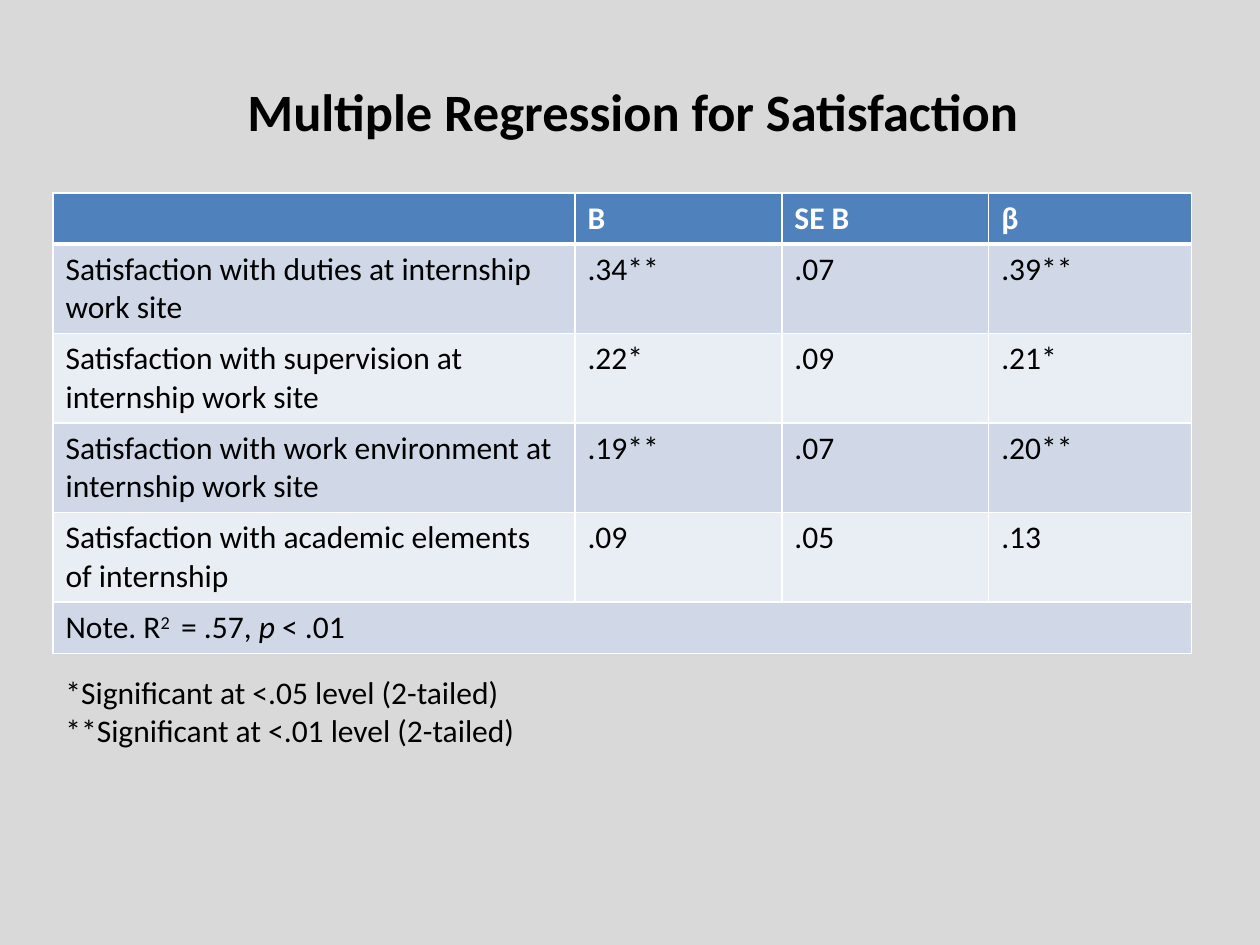
from lxml import etree
from pptx import Presentation
from pptx.dml.color import RGBColor
from pptx.enum.text import PP_ALIGN
from pptx.oxml.ns import qn
from pptx.util import Cm, Pt

CENTER = PP_ALIGN.CENTER
HUES = {"page": "D9D9D9", "head": "4F81BD", "odd": "D0D8E8",
        "even": "E9EDF4", "line": "FFFFFF", "text": "000000"}


def add_run(para, text, size=18, hue="text", bold=False, italic=False):
    run = para.add_run()
    run.text = text
    font = run.font
    font.name, font.size = "Calibri", Pt(size)
    font.bold, font.italic = bold, italic
    font.color.rgb = RGBColor.from_string(HUES[hue])
    return run


def add_edge(cell, side, width):
    """Draw one border of a cell; side is L, R, T or B."""
    props = cell._tc.get_or_add_tcPr()
    line = etree.SubElement(props, qn(f"a:ln{side}"), w=str(Pt(width)))
    fill = etree.SubElement(line, qn("a:solidFill"))
    etree.SubElement(fill, qn("a:srgbClr"), val=HUES["line"])


prs = Presentation()
prs.slide_width, prs.slide_height = Cm(25.4), Cm(19.05)
slide = prs.slides.add_slide(prs.slide_layouts[6])
back = slide.background.fill
back.solid()
back.fore_color.rgb = RGBColor.from_string(HUES["page"])

# Regression table
rows = [
    ("", "B", "SE B", "β"),
    ("Satisfaction with duties at internship work site",
     ".34**", ".07", ".39**"),
    ("Satisfaction with supervision at internship work site",
     ".22*", ".09", ".21*"),
    ("Satisfaction with work environment at internship work site",
     ".19**", ".07", ".20**"),
    ("Satisfaction with academic elements of internship",
     ".09", ".05", ".13"),
    ("", "", "", ""),
]
widths = [10.52, 4.17, 4.17, 4.09]
heights = [1.03] + [1.78] * 4 + [1.03]
table = slide.shapes.add_table(
    len(rows), len(widths), Cm(1.07), Cm(3.89),
    Cm(sum(widths)), Cm(sum(heights))).table
for col, width in zip(table.columns, widths):
    col.width = Cm(width)
for row, height in zip(table.rows, heights):
    row.height = Cm(height)

for r, row in enumerate(rows):
    top = r == 0
    band = "head" if top else "odd" if r % 2 else "even"
    for c, text in enumerate(row):
        cell = table.cell(r, c)
        for side in "LRTB":
            thick = (top and side == "B") or (r == 1 and side == "T")
            add_edge(cell, side, 3 if thick else 1)
        cell.fill.solid()
        cell.fill.fore_color.rgb = RGBColor.from_string(HUES[band])
        if text:
            add_run(cell.text_frame.paragraphs[0], text,
                    hue="line" if top else "text", bold=top)

last = len(rows) - 1
note = table.cell(last, 0)
note.merge(table.cell(last, len(widths) - 1))
para = note.text_frame.paragraphs[0]
add_run(para, "Note. R")
power = add_run(para, "2 ")
power._r.get_or_add_rPr().set("baseline", "30000")
add_run(para, " = .57, ")
add_run(para, "p", italic=True)
add_run(para, " < .01")

# Key to the stars
key = slide.shapes.add_textbox(Cm(1.07), Cm(13.44), Cm(12.7), Cm(1.8))
frame = key.text_frame
frame.word_wrap = True
add_run(frame.paragraphs[0], "*Significant at <.05 level (2-tailed)")
add_run(frame.add_paragraph(), "**Significant at <.01 level (2-tailed)")

# Title
title = slide.shapes.add_textbox(Cm(3.71), Cm(1.47), Cm(18.11), Cm(1.55))
frame = title.text_frame
frame.word_wrap = True
para = frame.paragraphs[0]
para.alignment = CENTER
add_run(para, "Multiple Regression for Satisfaction", size=30, bold=True)

prs.save("out.pptx")
